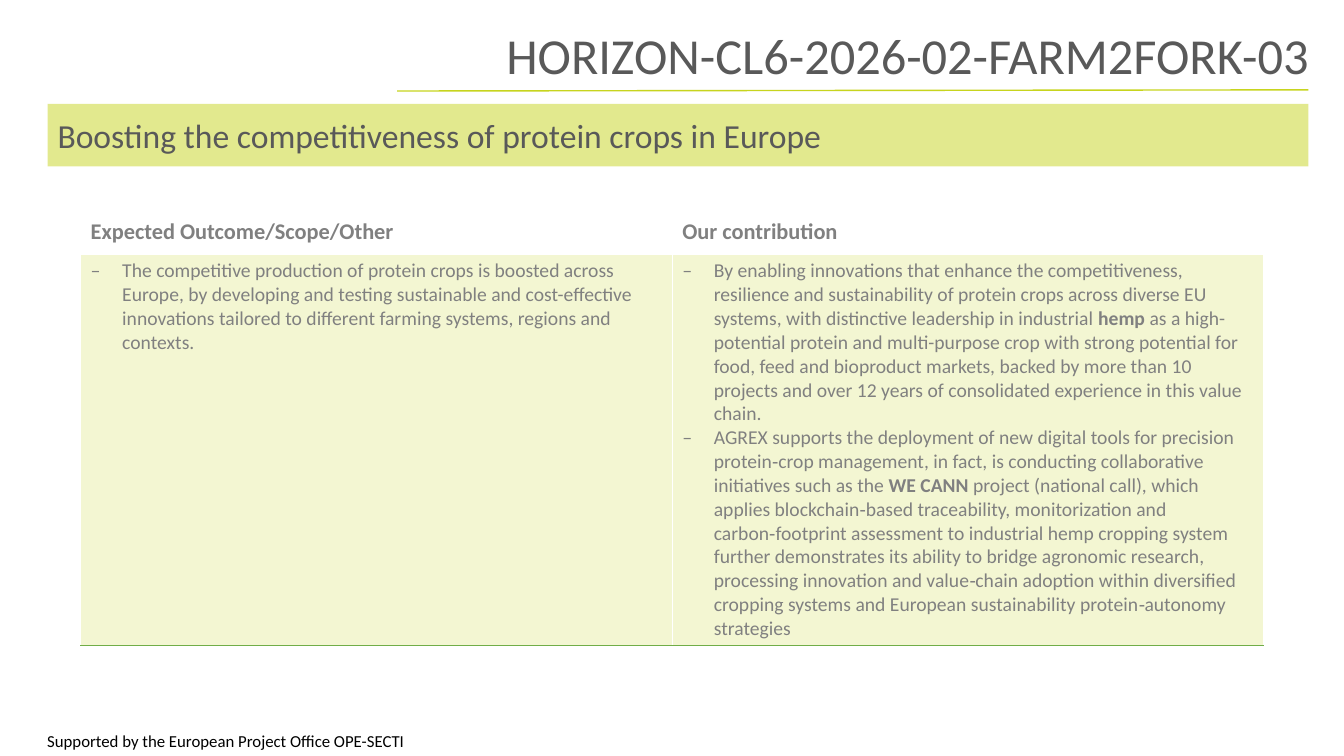
import pptx
import pptx.util
import pptx.dml.color
import pptx.enum.shapes
import pptx.enum.text
import pptx.oxml
import pptx.oxml.ns
import lxml.etree

Pt = pptx.util.Pt
qn = pptx.oxml.ns.qn
ANCHOR = pptx.enum.text.MSO_ANCHOR
ALIGN = pptx.enum.text.PP_ALIGN

COLORS = {
    "lime": "C7D41E",
    "green": "70AD47",
    "dark": "595959",
    "gray": "808080",
    "black": "000000",
}

HEADS = ["Expected Outcome/Scope/Other", "Our contribution"]
POINTS = [
    [
        [("The competitive production of protein crops is boosted across Europe, by developing and testing sustainable and cost-effective innovations tailored to different farming systems, regions and contexts.", False)],
    ],
    [
        [
            ("By enabling innovations that enhance the competitiveness, resilience and sustainability of protein crops across diverse EU systems, with distinctive leadership in industrial ", False),
            ("hemp", True),
            (" as a high-potential protein and multi-purpose crop with strong potential for food, feed and bioproduct markets, backed by more than 10 projects and over 12 years of consolidated experience in this value chain.", False),
        ],
        [
            ("AGREX supports the deployment of new digital tools for precision protein‑crop management, in fact, is conducting collaborative initiatives such as the ", False),
            ("WE CANN ", True),
            ("project (national call), which applies blockchain‑based traceability, monitorization and carbon‑footprint assessment to industrial hemp cropping system further demonstrates its ability to bridge agronomic research, processing innovation and value‑chain adoption within diversified cropping systems and European sustainability protein‑autonomy strategies", False),
        ],
    ],
]


class Deck:
    face = "Calibri"

    def __init__(self, wide, high):
        self.prs = pptx.Presentation()
        self.prs.slide_width, self.prs.slide_height = Pt(wide), Pt(high)
        self.slide = self.prs.slides.add_slide(self.prs.slide_layouts[5])

    def color(self, name):
        return pptx.dml.color.RGBColor.from_string(COLORS[name])

    def font(self, para, size, tint, bold=None):
        para.font.name = self.face
        para.font.size = Pt(size)
        para.font.color.rgb = self.color(tint)
        para.font.bold = bold

    def text(self, frame, words, size, tint, anchor, align=ALIGN.LEFT, space=1):
        frame.word_wrap = True
        frame.auto_size = pptx.enum.text.MSO_AUTO_SIZE.NONE
        frame.vertical_anchor = anchor
        para = frame.paragraphs[0]
        para.text = words
        para.alignment = align
        para.line_spacing = space
        self.font(para, size, tint)

    def paint(self, fill, tint, share):
        fill.solid()
        fill.fore_color.rgb = self.color(tint)
        tone = fill._xPr.find(qn("a:solidFill"))[0]
        lxml.etree.SubElement(tone, qn("a:alpha"), val=str(share * 1000))

    def title(self, words, left, top, wide, high):
        box = self.slide.shapes.title
        box.left, box.top, box.width, box.height = map(Pt, (left, top, wide, high))
        self.text(box.text_frame, words, 36, "dark", ANCHOR.BOTTOM, ALIGN.RIGHT, 0.9)

    def label(self, words, left, top, wide, high):
        box = self.slide.shapes.add_textbox(*map(Pt, (left, top, wide, high)))
        self.text(box.text_frame, words, 12, "black", ANCHOR.TOP, space=1.1)

    def band(self, words, left, top, wide, high):
        kind = pptx.enum.shapes.MSO_SHAPE.RECTANGLE
        box = self.slide.shapes.add_shape(kind, *map(Pt, (left, top, wide, high)))
        box.shadow.inherit = False
        box.line.fill.background()
        self.paint(box.fill, "lime", 50)
        self.text(box.text_frame, words, 24, "dark", ANCHOR.MIDDLE)

    def rule(self, *ends):
        kind = pptx.enum.shapes.MSO_CONNECTOR.STRAIGHT
        line = self.slide.shapes.add_connector(kind, *map(Pt, ends))
        line.line.color.rgb = self.color("lime")
        line.line.width = Pt(1)
        lxml.etree.SubElement(line._element.spPr, qn("a:effectLst"))

    def bullet(self, para, runs):
        props = para._p.get_or_add_pPr()
        props.set("marL", str(Pt(22.5)))
        props.set("indent", str(Pt(-22.5)))
        lxml.etree.SubElement(props, qn("a:buFont"), typeface=self.face)
        lxml.etree.SubElement(props, qn("a:buChar"), char="‒")
        self.font(para, 14, "gray", False)
        for words, bold in runs:
            run = para.add_run()
            run.text = words
            if bold:
                run.font.bold = True

    def edge(self, cell):
        props = cell._tc.get_or_add_tcPr()
        line = lxml.etree.Element(qn("a:lnB"), w=str(Pt(1)))
        fill = lxml.etree.SubElement(line, qn("a:solidFill"))
        lxml.etree.SubElement(fill, qn("a:srgbClr"), val=COLORS["green"])
        props.insert(0, line)

    def table(self, heads, points, left, top, wide, highs):
        size = map(Pt, (left, top, wide, sum(highs)))
        grid = self.slide.shapes.add_table(2, len(heads), *size).table
        grid.first_row = grid.horz_banding = False
        for row, high in zip(grid.rows, highs):
            row.height = Pt(high)
        for col, (head, items) in enumerate(zip(heads, points)):
            grid.columns[col].width = Pt(wide / len(heads))
            cell, body = grid.cell(0, col), grid.cell(1, col)
            cell.fill.background()
            para = cell.text_frame.paragraphs[0]
            para.text = head
            self.font(para, 16, "gray", True)
            self.paint(body.fill, "lime", 20)
            self.edge(body)
            frame = body.text_frame
            for spot, runs in enumerate(items):
                para = frame.add_paragraph() if spot else frame.paragraphs[0]
                self.bullet(para, runs)


def main():
    deck = Deck(960, 540)
    deck.label("Supported by the European Project Office OPE-SECTI", 26.6, 517, 279.4, 23)
    deck.table(HEADS, POINTS, 57.6, 152, 845.2, (29.5, 279.5))
    deck.rule(283.7, 65, 934.6, 64.2)
    deck.title("HORIZON-CL6-2026-02-FARM2FORK-03", 316.8, 13, 625.7, 51.8)
    deck.band("Boosting the competitiveness of protein crops in Europe", 34, 74.2, 900.6, 44.6)
    deck.prs.save("out.pptx")


if __name__ == "__main__":
    main()
